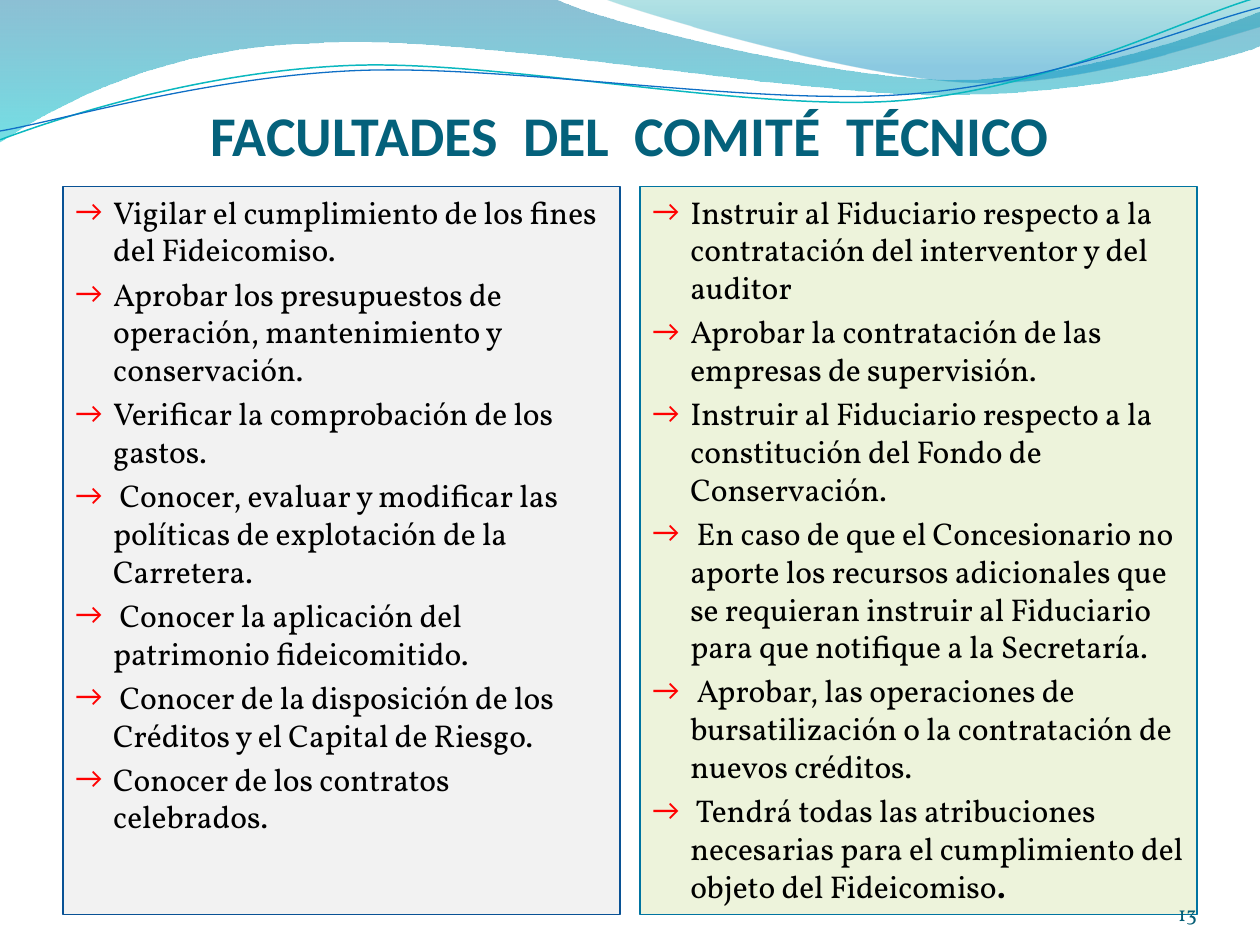
import math

from lxml import etree
from pptx import Presentation
from pptx.dml.color import RGBColor
from pptx.enum import shapes, text
from pptx.oxml import ns
from pptx.util import Inches, Pt

COLORS = {
    "title": "04617B", "number": "045D75", "body": "000000", "bullet": "FF0000",
    "left_fill": "F2F2F2", "left_line": "095295",
    "right_fill": "EDF3DB", "right_line": "0074A1",
    "wave_top": "0074A1", "wave_bottom": "00C6CF",
    "crest_top": "00A1A9", "crest_bottom": "008BBF",
    "teal_line": "0AB8BF", "blue_line": "0F6FC6",
}

# Outlines: a pair is a straight step, six numbers are a Bezier curve
WAVE = [(0, 0), (4.4, -0.01), (4.76, 0.17, 6.64, 0.63, 7.58, 0.63),
        (8.53, 0.63, 9.58, 0.26, 10, 0.09), (10.01, 0.36),
        (9.83, 0.44, 8.7, 0.76, 7.46, 0.75), (6.22, 0.75, 3.82, 0.28, 2.57, 0.34),
        (1.29, 0.36, 0.46, 0.83, -0.01, 1.13)]
CREST = [(4.79, -0.01), (5.09, 0.11, 6.82, 0.62, 7.69, 0.65),
         (8.56, 0.69, 9.61, 0.32, 10, 0.21), (10, 0)]
TEAL_LINE = [(0, 1.11), (0.48, 0.93, 1.58, 0.57, 2.77, 0.52),
             (3.95, 0.47, 5.93, 0.89, 7.13, 0.8), (8.33, 0.71, 9.38, 0.15, 9.98, -0.02)]
BLUE_LINE = [(0, 1.04), (0.47, 0.96, 1.64, 0.61, 2.83, 0.56),
             (4.03, 0.51, 5.97, 0.84, 7.17, 0.75), (8.36, 0.67, 9.41, 0.21, 10, 0.06)]
LINE_TILT = -2.7
LINE_CENTER = (4.99, 0.58)

LEFT_POWERS = [
    "Vigilar el cumplimiento de los fines del Fideicomiso.",
    "Aprobar los presupuestos de operación, mantenimiento y conservación.",
    "Verificar la comprobación de los gastos.",
    " Conocer, evaluar y modificar las políticas de explotación de la Carretera.",
    " Conocer la aplicación del patrimonio fideicomitido.",
    " Conocer de la disposición de los Créditos y el Capital de Riesgo.",
    "Conocer de los contratos celebrados.",
]
RIGHT_POWERS = [
    "Instruir al Fiduciario respecto a la contratación del interventor y del auditor",
    "Aprobar la contratación de las empresas de supervisión.",
    "Instruir al Fiduciario respecto a la constitución del Fondo de Conservación.",
    " En caso de que el Concesionario no aporte los recursos adicionales que se "
    "requieran instruir al Fiduciario para que notifique a la Secretaría.",
    " Aprobar, las operaciones de bursatilización o la contratación de nuevos créditos.",
    " Tendrá todas las atribuciones necesarias para el cumplimiento del objeto del "
    "Fideicomiso",
]

BODY_FONT = {"name": "Vollkorn", "size": Pt(18)}


def color(name):
    return RGBColor.from_string(COLORS[name])


def turned(point, degrees):
    """Place a point in inches, turned about the centre of the thin lines."""
    angle = math.radians(degrees)
    dx, dy = point[0] - LINE_CENTER[0], point[1] - LINE_CENTER[1]
    return (Inches(LINE_CENTER[0] + dx * math.cos(angle) - dy * math.sin(angle)),
            Inches(LINE_CENTER[1] + dx * math.sin(angle) + dy * math.cos(angle)))


def add_outline(slide, outline, close, tilt=0):
    steps = [[turned(step[i:i + 2], -tilt) for i in range(0, len(step), 2)]
             for step in outline]
    ends = [step[-1] for step in steps]
    builder = slide.shapes.build_freeform(*ends[0])
    builder.add_line_segments(ends[1:], close=close)
    curve = builder.convert_to_shape()
    # Bend the straight segments that have control points
    left, top = (min(axis) for axis in zip(*ends))
    segments = list(curve._element.iter(ns.qn("a:lnTo")))
    for segment, step in zip(segments, steps[1:]):
        if len(step) == 3:
            segment.tag = ns.qn("a:cubicBezTo")
            for i, (x, y) in enumerate(step[:2]):
                control = etree.Element(ns.qn("a:pt"), x=str(x - left), y=str(y - top))
                segment.insert(i, control)
    curve.rotation = tilt
    curve.shadow.inherit = False
    return curve


def add_wave(slide, outline, stops):
    """Stops are (position, colour name, opacity in percent), top to bottom."""
    wave = add_outline(slide, outline, close=True)
    wave.line.fill.background()
    wave.fill.gradient()
    wave.fill.gradient_angle = 270
    for stop, (position, name, _) in zip(wave.fill.gradient_stops, stops):
        stop.position = position
        stop.color.rgb = color(name)
    tints = wave._element.spPr.iter(ns.qn("a:srgbClr"))
    for tint, (_, _, opacity) in zip(tints, stops):
        etree.SubElement(tint, ns.qn("a:alpha"), val=str(opacity * 1000))


def add_wave_line(slide, outline, name, width):
    wave_line = add_outline(slide, outline, close=False, tilt=LINE_TILT)
    wave_line.fill.background()
    wave_line.line.color.rgb = color(name)
    wave_line.line.width = Pt(width)


def add_run(paragraph, words, color_name, font):
    run = paragraph.add_run()
    run.text = words
    run.font.color.rgb = color(color_name)
    for key, value in font.items():
        setattr(run.font, key, value)


def add_label(slide, box, words, align, color_name, font):
    label = slide.shapes.add_textbox(*map(Inches, box))
    frame = label.text_frame
    layout = {"word_wrap": True, "vertical_anchor": text.MSO_ANCHOR.BOTTOM,
              "margin_left": 0, "margin_right": 0, "margin_top": 0, "margin_bottom": 0}
    for key, value in layout.items():
        setattr(frame, key, value)
    frame.paragraphs[0].alignment = align
    add_run(frame.paragraphs[0], words, color_name, font)


def set_arrow_bullet(paragraph):
    props = paragraph._p.get_or_add_pPr()
    props.set("marL", str(Inches(0.3)))
    props.set("indent", str(Inches(-0.3)))
    tint = etree.SubElement(props, ns.qn("a:buClr"))
    etree.SubElement(tint, ns.qn("a:srgbClr"), val=COLORS["bullet"])
    etree.SubElement(props, ns.qn("a:buSzPct"), val="95000")
    etree.SubElement(props, ns.qn("a:buFont"), typeface="Calibri")
    etree.SubElement(props, ns.qn("a:buChar"), char="→")


def add_panel(slide, left, side, powers):
    panel = slide.shapes.add_shape(shapes.MSO_SHAPE.RECTANGLE, Inches(left),
                                   Inches(1.48), Inches(4.42), Inches(5.78))
    panel.shadow.inherit = False
    panel.fill.solid()
    panel.fill.fore_color.rgb = color(f"{side}_fill")
    panel.line.color.rgb = color(f"{side}_line")
    panel.line.width = Pt(0.75)
    frame = panel.text_frame
    frame.word_wrap = True
    frame.vertical_anchor = text.MSO_ANCHOR.TOP
    for i, power in enumerate(powers):
        paragraph = frame.add_paragraph() if i else frame.paragraphs[0]
        paragraph.alignment = text.PP_ALIGN.LEFT
        paragraph.space_before = Pt(3.6 if i else 0)
        set_arrow_bullet(paragraph)
        add_run(paragraph, power, "body", BODY_FONT)
    return frame


def main():
    prs = Presentation()
    prs.slide_width, prs.slide_height = Inches(10), Inches(7.5)
    slide = prs.slides.add_slide(prs.slide_layouts[6])

    # Waves along the top
    add_wave(slide, WAVE, [(0, "wave_top", 45), (1, "wave_bottom", 55)])
    add_wave(slide, CREST, [(0, "crest_top", 30), (0.8, "crest_bottom", 45)])
    add_wave_line(slide, TEAL_LINE, "teal_line", 0.85)
    add_wave_line(slide, BLUE_LINE, "blue_line", 0.75)

    # Title
    add_label(slide, (0.5, 0.69, 9, 0.64), "FACULTADES  DEL  COMITÉ  TÉCNICO",
              text.PP_ALIGN.CENTER, "title",
              {"name": "Calibri", "size": Pt(32), "bold": True})

    # Two panels of powers, the last one ending in a bold full stop
    add_panel(slide, 0.5, "left", LEFT_POWERS)
    right_frame = add_panel(slide, 5.08, "right", RIGHT_POWERS)
    add_run(right_frame.paragraphs[-1], ".", "body", {**BODY_FONT, "bold": True})

    # Page number
    add_label(slide, (8.67, 6.95, 0.83, 0.4), "13", text.PP_ALIGN.RIGHT, "number",
              {"name": "Vollkorn", "size": Pt(12)})

    prs.save("out.pptx")


if __name__ == "__main__":
    main()
